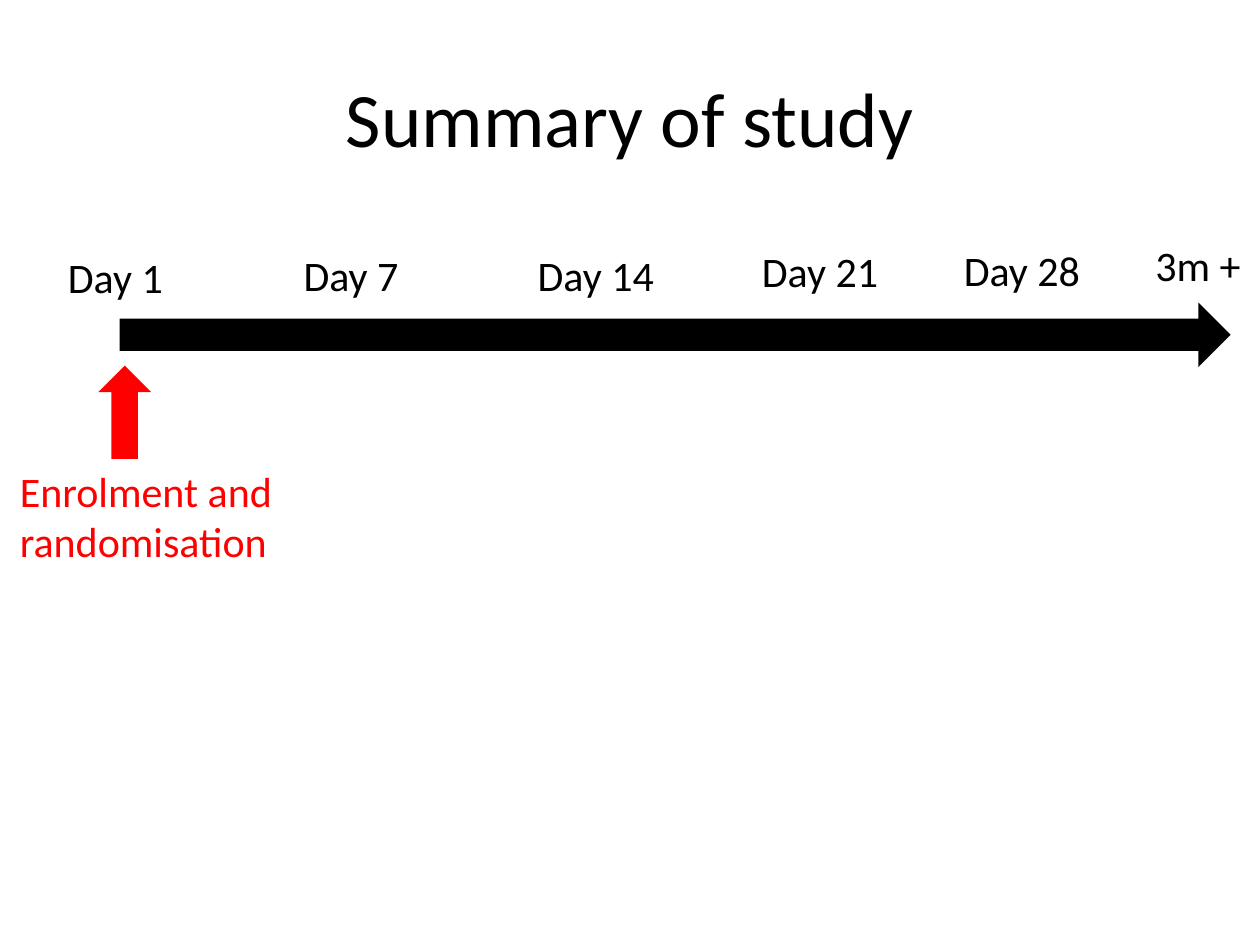
from pptx import Presentation
from pptx.dml.color import RGBColor
from pptx.enum.shapes import MSO_SHAPE
from pptx.enum.text import MSO_ANCHOR, PP_ALIGN
from pptx.util import Cm, Pt

BLACK = RGBColor(0x00, 0x00, 0x00)
RED = RGBColor(0xFF, 0x00, 0x00)
LEFT, CENTER = PP_ALIGN.LEFT, PP_ALIGN.CENTER
TOP, MIDDLE = MSO_ANCHOR.TOP, MSO_ANCHOR.MIDDLE
RIGHT_ARROW, UP_ARROW = MSO_SHAPE.RIGHT_ARROW, MSO_SHAPE.UP_ARROW

LABEL_HEIGHT = 1.27
TIME_POINTS = [
    ("Day 1", 1.12, 4.95, 2.57),
    ("Day 7", 5.87, 4.9, 2.57),
    ("Day 14", 10.59, 4.9, 3.25),
    ("Day 21", 15.11, 4.83, 3.3),
    ("Day 28", 19.18, 4.8, 3.3),
    ("3m +", 23.04, 4.7, 2.36),
]


def add_text(page, text, bounds, size=24, color=BLACK, align=LEFT, anchor=TOP):
    """Add a wrapped text box with one paragraph; bounds are in centimetres."""
    box = page.shapes.add_textbox(*map(Cm, bounds))
    frame = box.text_frame
    frame.word_wrap = True
    frame.vertical_anchor = anchor
    para = frame.paragraphs[0]
    para.alignment = align
    span = para.add_run()
    span.text = text
    for name, value in {"name": "Calibri", "size": Pt(size)}.items():
        setattr(span.font, name, value)
    span.font.color.rgb = color


def add_arrow(page, kind, bounds, color):
    """Add a solid block arrow without outline; bounds are in centimetres."""
    arrow = page.shapes.add_shape(kind, *map(Cm, bounds))
    arrow.shadow.inherit = False
    arrow.fill.solid()
    arrow.fill.fore_color.rgb = color
    arrow.line.fill.background()


def main():
    """Build the study timeline slide."""
    deck = Presentation()
    deck.slide_width, deck.slide_height = Cm(25.4), Cm(19.05)
    page = deck.slides.add_slide(deck.slide_layouts[6])

    add_text(page, "Summary of study", (1.27, 0.76, 22.86, 3.18),
             size=44, align=CENTER, anchor=MIDDLE)
    add_arrow(page, RIGHT_ARROW, (2.41, 6.1, 22.4, 1.3), BLACK)
    add_arrow(page, UP_ARROW, (1.98, 7.37, 1.07, 1.88), RED)
    for text, left, top, width in TIME_POINTS:
        add_text(page, text, (left, top, width, LABEL_HEIGHT))
    add_text(page, "Enrolment and randomisation", (0.15, 9.25, 6.35, 2.31), color=RED)

    deck.save("out.pptx")


if __name__ == "__main__":
    main()
